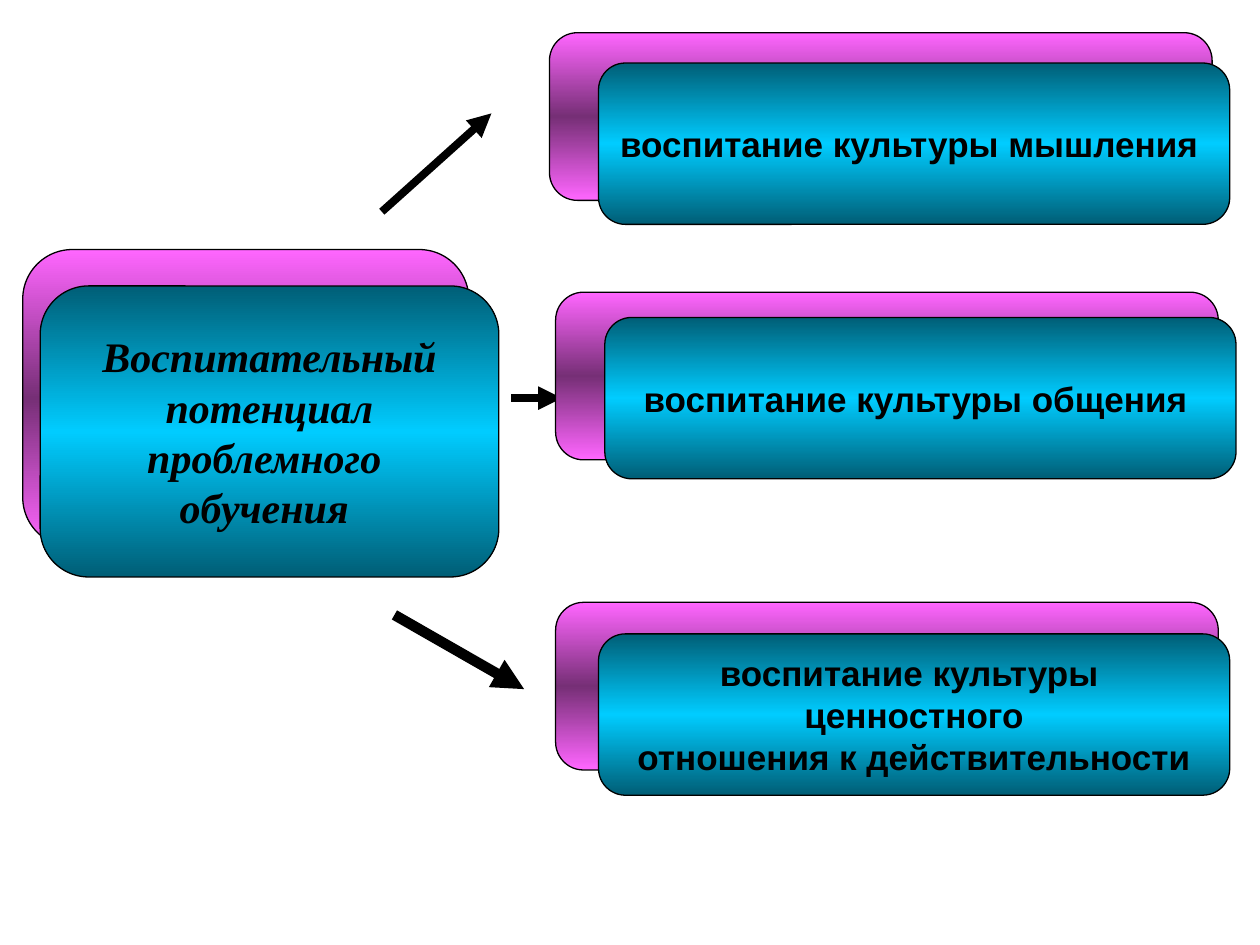
import copy

import pptx
import pptx.dml.color
import pptx.enum.shapes
import pptx.enum.text
import pptx.oxml
import pptx.oxml.ns
import pptx.util

Pt = pptx.util.Pt
BLACK = "000000"
PINK, PLUM = "FF66FF", "762F76"
TEAL, CYAN = "005E76", "00CCFF"

MAIN_FONT = {"name": "Times New Roman", "size": Pt(24), "bold": True, "italic": True}
BRANCH_FONT = {"name": "Arial", "size": Pt(20), "bold": True}
BRANCH_BACK_SIZE = (378.7, 95.8)
BRANCH_FRONT_SIZE = (360.7, 92.2)

# Back corner, front corner, lines of text
BRANCHES = [
    ((314, 18.7), (342, 36), ["воспитание культуры мышления "]),
    ((317.5, 167), (345.6, 181.4), ["воспитание культуры общения "]),
    ((317.5, 344.2), (342, 362.2),
     ["воспитание культуры ", "ценностного", "отношения к действительности"]),
]

# Start, end, line width
ARROWS = [
    ((218.2, 121), (280.8, 64.8), 4.5),
    ((292.3, 227.5), (321.1, 227.5), 4.5),
    ((225.4, 351.4), (299.5, 393.8), 6),
]


def rgb(value):
    return pptx.dml.color.RGBColor.from_string(value)


def fill_gradient(shape, edge, middle):
    """Vertical gradient that runs from edge to middle and back."""
    fill = shape.fill
    fill.gradient()
    fill.gradient_angle = 270
    stop_list = shape._element.spPr.find(".//" + pptx.oxml.ns.qn("a:gsLst"))
    stop_list.append(copy.deepcopy(stop_list[-1]))
    for stop, color, position in zip(fill.gradient_stops, (edge, middle, edge), (0, 0.5, 1)):
        stop.color.rgb = rgb(color)
        stop.position = position


def add_box(slide, corner, size, edge, middle):
    kind = pptx.enum.shapes.MSO_SHAPE.FLOWCHART_ALTERNATE_PROCESS
    box = slide.shapes.add_shape(kind, *map(Pt, corner + size))
    box.shadow.inherit = False
    fill_gradient(box, edge, middle)
    box.line.color.rgb = rgb(BLACK)
    box.line.width = Pt(0.75)
    return box


def write_text(box, lines, font_format):
    frame = box.text_frame
    frame.word_wrap = False
    frame.vertical_anchor = pptx.enum.text.MSO_ANCHOR.MIDDLE
    for index, line in enumerate(lines):
        para = frame.paragraphs[0] if index == 0 else frame.add_paragraph()
        para.alignment = pptx.enum.text.PP_ALIGN.CENTER
        span = para.add_run()
        span.text = line
        span.font.color.rgb = rgb(BLACK)
        for name, value in font_format.items():
            setattr(span.font, name, value)


def add_card(slide, back, front, lines, font_format):
    """Pink box with a blue text box in front; each is (corner, size)."""
    add_box(slide, *back, PINK, PLUM)
    write_text(add_box(slide, *front, TEAL, CYAN), lines, font_format)


def add_arrow(slide, start, end, width):
    kind = pptx.enum.shapes.MSO_CONNECTOR.STRAIGHT
    arrow = slide.shapes.add_connector(kind, *map(Pt, start + end))
    arrow.line.color.rgb = rgb(BLACK)
    arrow.line.width = Pt(width)
    namespace = pptx.oxml.ns.nsdecls("a")
    head = pptx.oxml.parse_xml(f'<a:tailEnd {namespace} type="triangle"/>')
    arrow.line._get_or_add_ln().append(head)
    arrow._element.spPr.append(pptx.oxml.parse_xml(f"<a:effectLst {namespace}/>"))


def main():
    deck = pptx.Presentation()
    deck.slide_width, deck.slide_height = Pt(720), Pt(540)
    page = deck.slides.add_slide(deck.slide_layouts[6])

    # Main idea on the left
    add_card(page, ((13, 142.6), (254.9, 169.9)), ((23, 163.4), (262.1, 166.3)),
             ["Воспитательный", "потенциал", "проблемного ", "обучения "], MAIN_FONT)

    # Arrows towards the branches
    for start, end, width in ARROWS:
        add_arrow(page, start, end, width)

    # Branches on the right
    for back, front, lines in BRANCHES:
        add_card(page, (back, BRANCH_BACK_SIZE), (front, BRANCH_FRONT_SIZE),
                 lines, BRANCH_FONT)

    deck.save("out.pptx")


if __name__ == "__main__":
    main()
